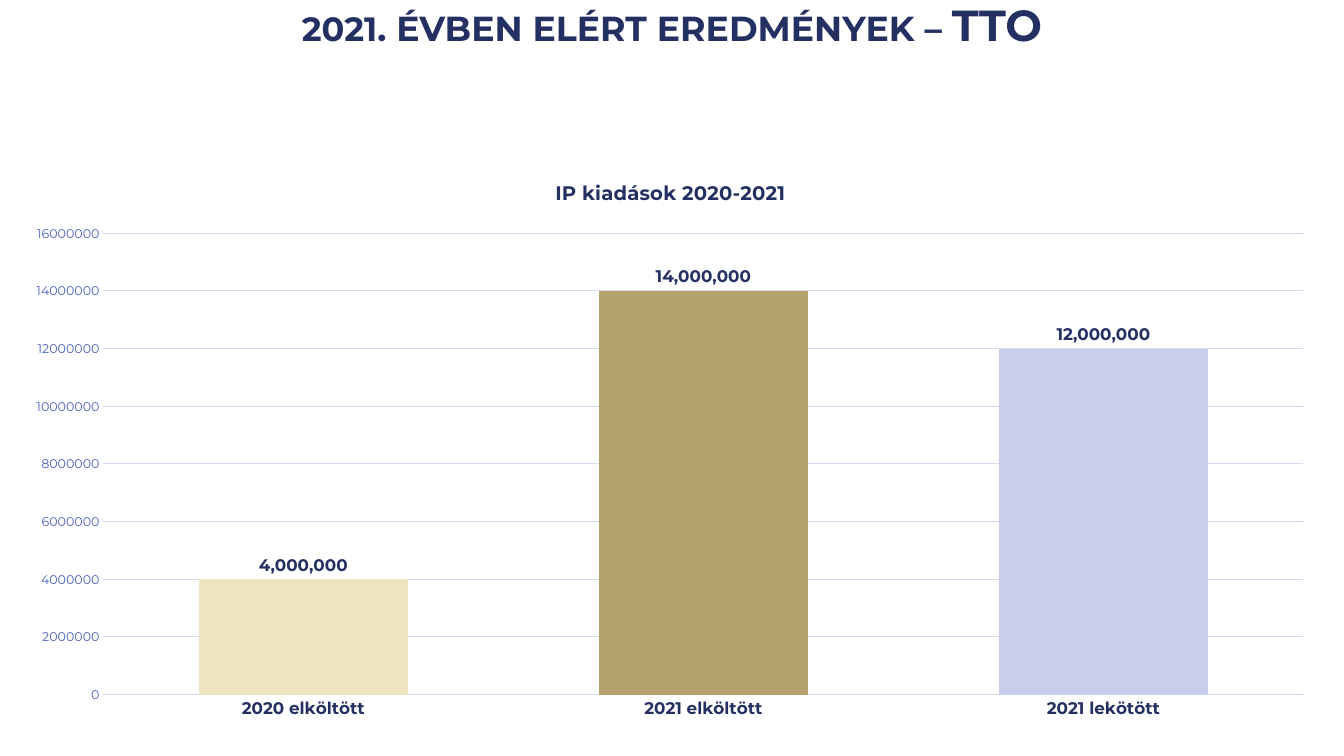
from lxml import etree
from pptx import Presentation
from pptx.chart.data import CategoryChartData
from pptx.dml.color import RGBColor
from pptx.enum.chart import XL_CHART_TYPE as ChartType
from pptx.enum.chart import XL_LABEL_POSITION as LabelPosition
from pptx.enum.chart import XL_TICK_MARK as TickMark
from pptx.enum.text import MSO_ANCHOR, PP_ALIGN
from pptx.oxml import parse_xml
from pptx.oxml.ns import nsdecls
from pptx.util import Inches, Pt

FONT = "Montserrat"
NAVY = "242F62"
BLUE = "4C60BD"
PALE = "D6DAF0"
SPENDING = [
    ("2020 elköltött", 4000000, "EEE5C0"),
    ("2021 elköltött", 14000000, "B3A16E"),
    ("2021 lekötött", 12000000, "C8CEEB"),
]


def color(value):
    return RGBColor.from_string(value)


def set_font(font, size, value, bold=False):
    font.name = FONT
    font.size = Pt(size)
    font.bold = bold
    font.color.rgb = color(value)


def set_line(line, value):
    line.color.rgb = color(value)
    line.width = Pt(0.75)


def add_title(slide, left, top, width, height):
    title = slide.shapes.title
    title.left, title.top = Inches(left), Inches(top)
    title.width, title.height = Inches(width), Inches(height)
    frame = title.text_frame
    frame.word_wrap = True
    frame.vertical_anchor = MSO_ANCHOR.MIDDLE
    paragraph = frame.paragraphs[0]
    paragraph.alignment = PP_ALIGN.CENTER
    paragraph.line_spacing = 0.9
    for text, size in [("2021", 30), (". évben elért eredmények – TTO", 31)]:
        run = paragraph.add_run()
        run.text = text
        set_font(run.font, size, NAVY, True)
        run.font._element.set("cap", "small")


def set_plot_layout(chart, left, top, width, height):
    plot_area = chart._chartSpace.chart.plotArea
    for layout in plot_area.findall("{*}layout"):
        plot_area.remove(layout)
    layout = parse_xml(f"<c:layout {nsdecls('c')}><c:manualLayout/></c:layout>")
    settings = [("layoutTarget", "inner"), ("xMode", "edge"), ("yMode", "edge"),
                ("x", left), ("y", top), ("w", width), ("h", height)]
    for name, value in settings:
        tag = "{" + layout.nsmap["c"] + "}" + name
        etree.SubElement(layout[0], tag).set("val", str(value))
    plot_area.insert(0, layout)


def format_axes(chart):
    categories, values = chart.category_axis, chart.value_axis
    for axis in (categories, values):
        axis.major_tick_mark = axis.minor_tick_mark = TickMark.NONE
    set_font(categories.tick_labels.font, 12, NAVY, True)
    set_line(categories.format.line, PALE)
    set_font(values.tick_labels.font, 9, BLUE)
    values.format.line.fill.background()
    values.minimum_scale, values.maximum_scale = 0, 16000000
    values.major_unit = 2000000
    values.has_major_gridlines = True
    set_line(values.major_gridlines.format.line, PALE)


def format_columns(plot):
    plot.gap_width = 92
    plot.overlap = -70
    plot.vary_by_categories = False
    series = plot.series[0]
    for index, (_, _, fill_color) in enumerate(SPENDING):
        fill = series.points[index].format.fill
        fill.solid()
        fill.fore_color.rgb = color(fill_color)
    labels = series.data_labels
    labels.show_value = True
    labels.number_format = "#,##0"
    labels.number_format_is_linked = False
    labels.position = LabelPosition.OUTSIDE_END
    set_font(labels.font, 12, NAVY, True)


def add_spending_chart(slide, left, top, width, height):
    data = CategoryChartData()
    data.categories = [name for name, _, _ in SPENDING]
    data.add_series("Series 1", [value for _, value, _ in SPENDING])
    chart = slide.shapes.add_chart(
        ChartType.COLUMN_CLUSTERED, Inches(left), Inches(top),
        Inches(width), Inches(height), data).chart
    set_font(chart.font, 10, NAVY)
    chart.has_legend = False
    chart.has_title = True
    paragraph = chart.chart_title.text_frame.paragraphs[0]
    paragraph.text = "IP kiadások 2020-2021"
    set_font(paragraph.font, 14, NAVY, True)
    chart.chart_title.include_in_layout = False
    set_plot_layout(chart, 0.07, 0.13, 0.91, 0.81)
    format_axes(chart)
    format_columns(chart.plots[0])


def main():
    presentation = Presentation()
    presentation.slide_width = Inches(13.33)
    presentation.slide_height = Inches(7.5)
    slide = presentation.slides.add_slide(presentation.slide_layouts[5])
    add_title(slide, 0, 0, 13.33, 0.54)
    add_spending_chart(slide, 0.11, 1.58, 13.08, 5.65)
    presentation.save("out.pptx")


if __name__ == "__main__":
    main()
